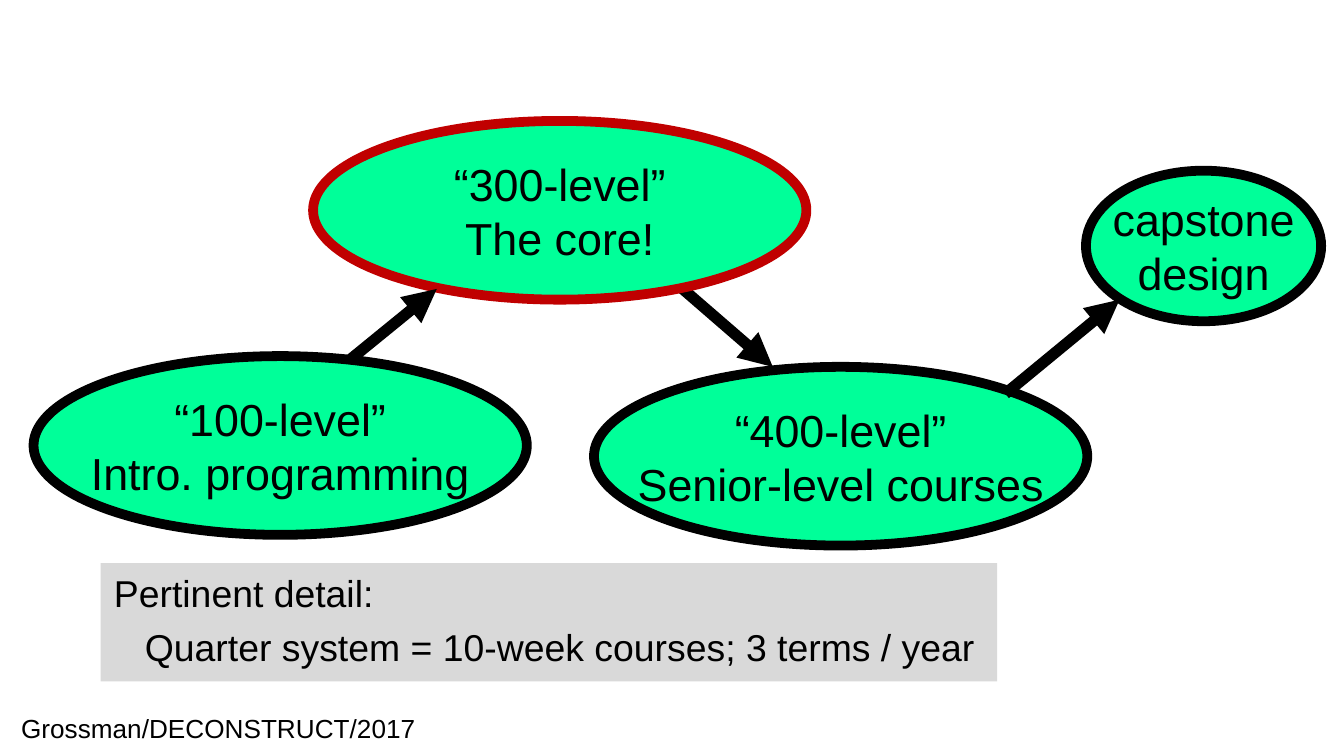
"""Builds the slide that shows how course levels lead to capstone design."""
from lxml.etree import SubElement
from pptx import Presentation
from pptx.dml.color import RGBColor
from pptx.enum.shapes import MSO_CONNECTOR, MSO_SHAPE
from pptx.enum.text import MSO_ANCHOR, PP_ALIGN
from pptx.oxml.ns import qn
from pptx.util import Inches, Pt

COLORS = {"ink": "000000", "level": "00FF99", "core": "C00000", "note": "D9D9D9"}
LEVEL_SIZE = (3.67, 1.33)


def color(name):
    return RGBColor.from_string(COLORS[name])


def write(shape, lines, size, align=PP_ALIGN.CENTER, gap=0):
    frame = shape.text_frame
    for index, line in enumerate(lines):
        para = frame.add_paragraph() if index else frame.paragraphs[0]
        para.alignment = align
        para.space_after = Pt(gap)
        span = para.add_run()
        span.text = line
        span.font.name = "Arial"
        span.font.size = Pt(size)
        span.font.color.rgb = color("ink")
    return frame


def add_filled(page, kind, box, fill):
    shape = page.shapes.add_shape(kind, *map(Inches, box))
    shape.shadow.inherit = False
    shape.fill.solid()
    shape.fill.fore_color.rgb = color(fill)
    return shape


def add_course(page, left, top, lines, size=LEVEL_SIZE, outline="ink"):
    oval = add_filled(page, MSO_SHAPE.OVAL, (left, top, *size), "level")
    oval.line.color.rgb = color(outline)
    oval.line.width = Pt(5.25)
    frame = write(oval, lines, 24)
    frame.word_wrap = False
    frame.vertical_anchor = MSO_ANCHOR.MIDDLE


def add_arrow(page, start, end):
    arrow = page.shapes.add_connector(
        MSO_CONNECTOR.STRAIGHT, *map(Inches, start + end))
    arrow.line.color.rgb = color("ink")
    arrow.line.width = Pt(6)
    SubElement(arrow.line._get_or_add_ln(), qn("a:tailEnd"), type="triangle")
    SubElement(arrow._element.spPr, qn("a:effectLst"))


def add_note(page, box, lines):
    note = add_filled(page, MSO_SHAPE.RECTANGLE, box, "note")
    note.line.fill.background()
    frame = write(note, lines, 20, PP_ALIGN.LEFT, gap=5)
    frame.word_wrap = True
    frame.vertical_anchor = MSO_ANCHOR.TOP
    for para in frame.paragraphs[1:]:
        para._p.get_or_add_pPr().set("marL", str(Inches(0.23)))


def add_footer(page, box, text):
    footer = page.shapes.add_textbox(*map(Inches, box))
    write(footer, [text], 14).word_wrap = True


def main():
    deck = Presentation()
    deck.slide_width = Inches(10)
    deck.slide_height = Inches(10 * 9 / 16)
    page = deck.slides.add_slide(deck.slide_layouts[6])
    add_footer(page, (-0.25, 5.25, 3.75, 0.38), "Grossman/DECONSTRUCT/2017")
    add_arrow(page, (5.08, 2.15), (5.75, 2.73))
    add_course(page, 2.33, 0.9, ["“300-level”", "The core!"], outline="core")
    add_arrow(page, (2.33, 2.9), (3.25, 2.15))
    add_course(page, 4.42, 2.73, ["“400-level”", "Senior-level courses"])
    add_arrow(page, (7.48, 2.93), (8.33, 2.23))
    add_course(page, 8.08, 1.27, ["capstone", "design"], size=(1.75, 1.12))
    add_course(page, 0.25, 2.65, ["“100-level”", "Intro. programming"])
    add_note(page, (0.75, 4.19, 6.67, 0.88), [
        "Pertinent detail:",
        "Quarter system = 10-week courses; 3 terms / year"])
    deck.save("out.pptx")


if __name__ == "__main__":
    main()
